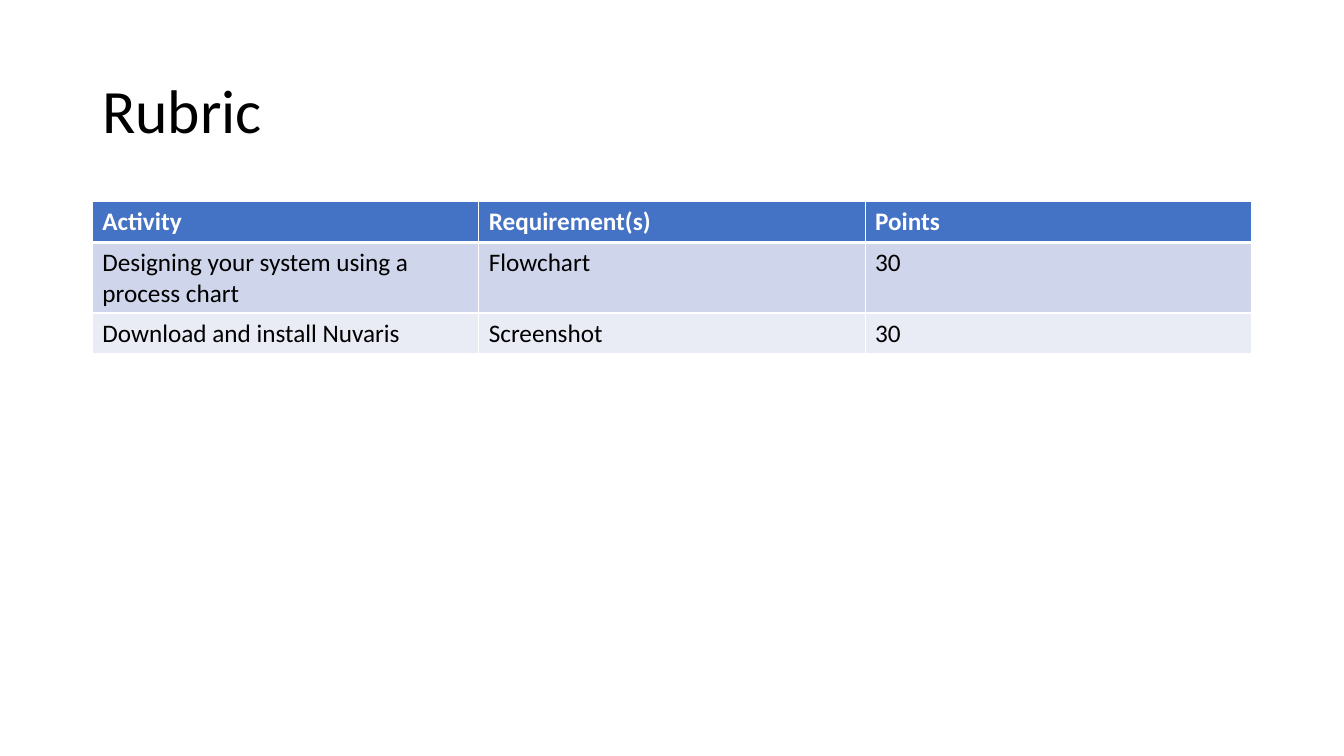
from lxml import etree
from pptx import Presentation
from pptx.dml.color import RGBColor
from pptx.enum.text import MSO_ANCHOR
from pptx.oxml.ns import qn
from pptx.util import Pt

MIDDLE = MSO_ANCHOR.MIDDLE
BLACK = RGBColor(0x00, 0x00, 0x00)
WHITE = RGBColor(0xFF, 0xFF, 0xFF)
BLUE = RGBColor(0x44, 0x72, 0xC4)
BAND_DARK = RGBColor(0xCF, 0xD5, 0xEA)
BAND_LIGHT = RGBColor(0xE9, 0xEB, 0xF5)

LEFT, WIDTH = 66, 828
ROW_HEIGHT = 29.2
THIN, THICK = 1, 3

RUBRIC = [
    ("Activity", "Requirement(s)", "Points"),
    ("Designing your system using a process chart", "Flowchart", "30"),
    ("Download and install Nuvaris", "Screenshot", "30"),
]


class RubricPage:
    """Draws text and tables in one style on a page."""

    def __init__(self, page, font="Calibri"):
        self.page = page
        self.font = font

    def add_span(self, para, text, size, color, bold=False):
        span = para.add_run()
        span.text = text
        for name, value in {"name": self.font, "size": Pt(size), "bold": bold}.items():
            setattr(span.font, name, value)
        span.font.color.rgb = color

    def title(self, text, left, top, width, height):
        box = self.page.shapes.add_textbox(Pt(left), Pt(top), Pt(width), Pt(height))
        frame = box.text_frame
        for name, value in {"word_wrap": True, "vertical_anchor": MIDDLE}.items():
            setattr(frame, name, value)
        para = frame.paragraphs[0]
        para.line_spacing = 0.9
        self.add_span(para, text, 44, BLACK)

    def border(self, cell, side, width):
        properties = cell._tc.get_or_add_tcPr()
        line = etree.SubElement(properties, qn(f"a:ln{side}"), w=str(Pt(width)))
        fill = etree.SubElement(line, qn("a:solidFill"))
        etree.SubElement(fill, qn("a:srgbClr"), val=str(WHITE))

    def table(self, rows, left, top, width):
        frame = self.page.shapes.add_table(
            len(rows), len(rows[0]), Pt(left), Pt(top), Pt(width), Pt(ROW_HEIGHT * len(rows)))
        for number, texts in enumerate(rows):
            header = number == 0
            band = BLUE if header else (BAND_LIGHT, BAND_DARK)[number % 2]
            edges = {"L": THIN, "R": THIN,
                     "T": THICK if number == 1 else THIN,
                     "B": THICK if header else THIN}
            for column, text in enumerate(texts):
                cell = frame.table.cell(number, column)
                for side, weight in edges.items():
                    self.border(cell, side, weight)
                cell.fill.solid()
                cell.fill.fore_color.rgb = band
                para = cell.text_frame.paragraphs[0]
                self.add_span(para, text, 18, WHITE if header else BLACK, header)


def main():
    deck = Presentation()
    deck.slide_width, deck.slide_height = Pt(960), Pt(540)
    rubric = RubricPage(deck.slides.add_slide(deck.slide_layouts[6]))
    rubric.title("Rubric", LEFT, 28.75, WIDTH, 104.4)
    rubric.table(RUBRIC, LEFT, 144, WIDTH)
    deck.save("out.pptx")


if __name__ == "__main__":
    main()
